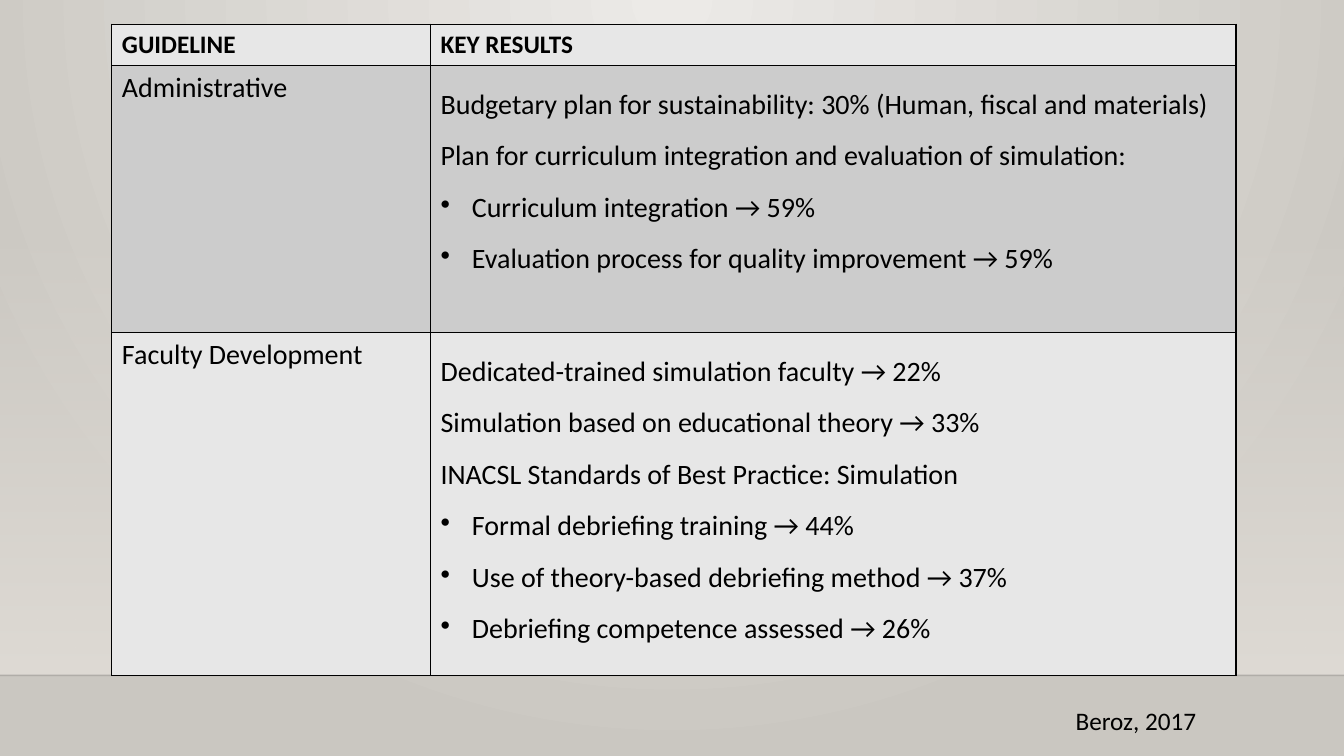
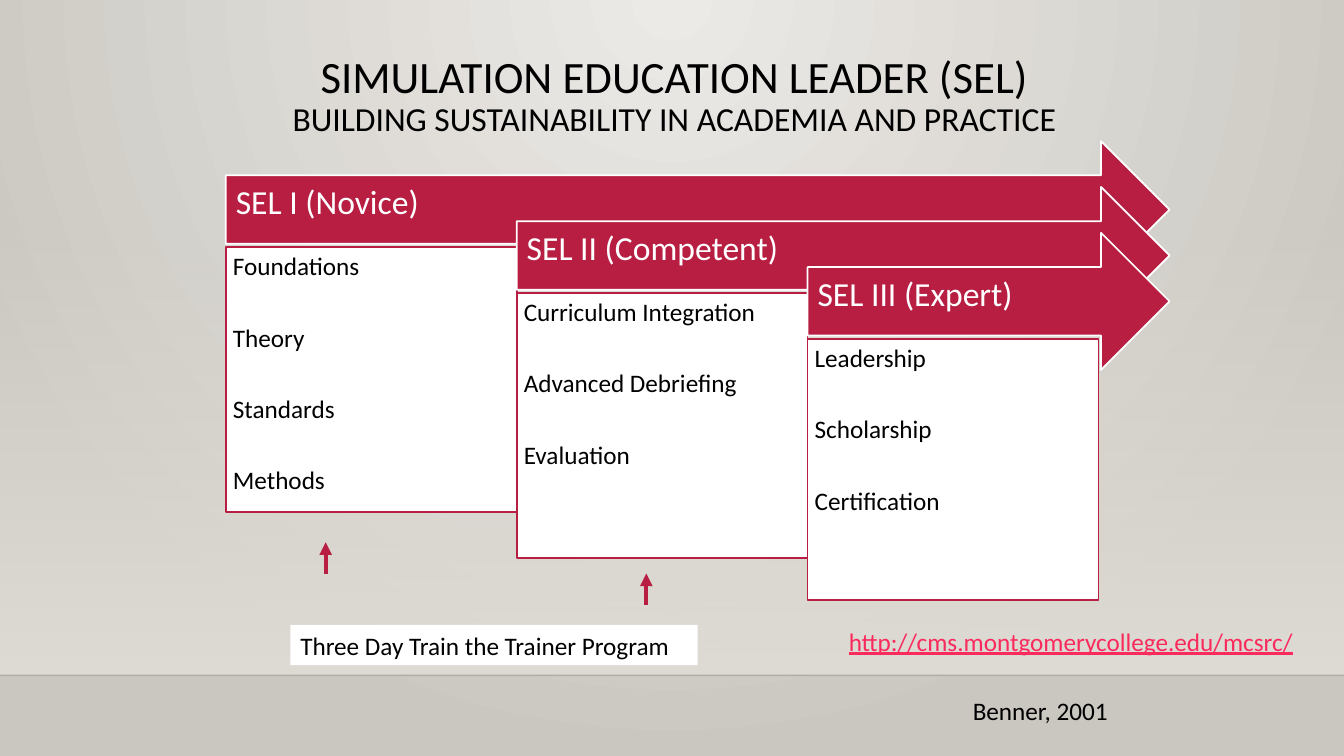
"""Build two slides on simulation guidelines and the leader programme."""
import dataclasses

import lxml.etree
import pptx
import pptx.dml.color
import pptx.enum.shapes
import pptx.enum.text
import pptx.oxml.ns
import pptx.util

Inches = pptx.util.Inches
Pt = pptx.util.Pt
qn = pptx.oxml.ns.qn
SHAPES = pptx.enum.shapes.MSO_SHAPE
ANCHOR = pptx.enum.text.MSO_ANCHOR
ALIGN = pptx.enum.text.PP_ALIGN


@dataclasses.dataclass(frozen=True)
class Theme:
    """Colours, font and type sizes shared by the slides."""
    font: str = "Calibri"
    ink: str = "000000"
    white: str = "FFFFFF"
    accent: str = "B71E42"
    link: str = "FA2B5C"
    glow: str = "ECEAE7"
    ground: str = "CAC7C1"
    haze: str = "DFDBD5"
    light_row: str = "E7E7E7"
    dark_row: str = "CCCCCC"
    title_size: int = 32
    heading_size: int = 24
    table_size: int = 20
    body_size: int = 18


THEME = Theme()
WIDTH, HEIGHT = 13.33, 7.5
HORIZON = 6.7

GUIDELINES = [
    ("Administrative", 2.65, THEME.dark_row, [
        "Budgetary plan for sustainability: 30% (Human, fiscal and materials)",
        "Plan for curriculum integration and evaluation of simulation:",
    ], [
        "Curriculum integration → 59%",
        "Evaluation process for quality improvement → 59%",
    ]),
    ("Faculty Development", 3.4, THEME.light_row, [
        "Dedicated-trained simulation faculty → 22%",
        "Simulation based on educational theory → 33%",
        "INACSL Standards of Best Practice: Simulation",
    ], [
        "Formal debriefing training → 44%",
        "Use of theory-based debriefing method → 37%",
        "Debriefing competence assessed → 26%",
    ]),
]

STAGES = [
    ("SEL I (Novice)", 2.63, ["Foundations", "Theory", "Standards", "Methods"]),
    ("SEL II (Competent)", 2.63, ["Curriculum Integration", "Advanced Debriefing", "Evaluation"]),
    ("SEL III (Expert)", 2.59, ["Leadership", "Scholarship", "Certification"]),
]


def rgb(value):
    """Return a colour from its hex value."""
    return pptx.dml.color.RGBColor.from_string(value)


def add_element(parent, tag, **attributes):
    """Append a drawing element with the given attributes."""
    return lxml.etree.SubElement(parent, qn(tag), attributes)


def set_font(font, size, color=THEME.ink, bold=False):
    """Apply the theme font with a size and colour."""
    font.name, font.size, font.bold = THEME.font, Pt(size), bold
    font.color.rgb = rgb(color)


def write_lines(frame, lines, size, color=THEME.ink, bold=False, spacing=None, gap=0):
    """Write one paragraph per line and return the paragraphs."""
    frame.word_wrap = True
    for index, line in enumerate(lines):
        para = frame.add_paragraph() if index else frame.paragraphs[0]
        para.text = line
        para.alignment = ALIGN.LEFT
        if spacing:
            para.line_spacing = spacing
        if index and gap:
            para.space_before = Pt(gap)
        set_font(para.font, size, color, bold)
    return frame.paragraphs


def set_insets(frame, left, top, right, bottom):
    """Set the four text margins in inches."""
    frame.margin_left, frame.margin_top = Inches(left), Inches(top)
    frame.margin_right, frame.margin_bottom = Inches(right), Inches(bottom)


def add_label(page, left, top, width, text, color=THEME.ink):
    """Add a single line of body text."""
    box = page.shapes.add_textbox(Inches(left), Inches(top), Inches(width), Inches(0.4))
    return write_lines(box.text_frame, [text], THEME.body_size, color)[0]


def add_block(page, preset, left, top, width, height, fill, outline=None):
    """Add a plain preset shape with an optional outline."""
    block = page.shapes.add_shape(preset, Inches(left), Inches(top), Inches(width), Inches(height))
    block.shadow.inherit = False
    block.fill.solid()
    block.fill.fore_color.rgb = rgb(fill)
    if outline:
        block.line.color.rgb = rgb(outline)
        block.line.width = Pt(1.25)
    else:
        block.line.fill.background()
    block.text_frame.vertical_anchor = ANCHOR.TOP
    return block


def add_line(page, start, end, color, width):
    """Add a straight line and return its outline element."""
    line = page.shapes.add_connector(
        pptx.enum.shapes.MSO_CONNECTOR.STRAIGHT, *(Inches(value) for value in start + end))
    line.line.color.rgb = rgb(color)
    line.line.width = Pt(width)
    add_element(line._element.spPr, "a:effectLst")
    return line.line._get_or_add_ln()


def set_gradient(fill, colors):
    """Apply a two-stop gradient and return its element stops."""
    fill.gradient()
    for stop, color in zip(fill.gradient_stops, colors):
        stop.color.rgb = rgb(color)


def set_background(master):
    """Give the master a radial glow from the top centre."""
    set_gradient(master.background.fill, (THEME.glow, THEME.ground))
    gradient = next(master._element.iter(qn("a:gradFill")))
    gradient.remove(gradient.find(qn("a:lin")))
    glow = add_element(gradient, "a:path", **{"path": "circle"})
    add_element(glow, "a:fillToRect", l="43000", t="0", r="43000", b="100000")


def add_page(deck):
    """Add a blank page with the haze and the horizon line."""
    page = deck.slides.add_slide(deck.slide_layouts[6])
    haze = add_block(page, SHAPES.RECTANGLE, 0, 2.21, WIDTH, HORIZON - 2.21, THEME.haze)
    set_gradient(haze.fill, (THEME.haze, THEME.haze))
    haze.fill.gradient_angle = 270
    first_color = next(haze._element.spPr.iter(qn("a:srgbClr")))
    add_element(first_color, "a:alpha", val="0")
    outline = add_line(page, (0, HORIZON), (WIDTH, HORIZON), THEME.ink, 1)
    add_element(next(outline.iter(qn("a:srgbClr"))), "a:alpha", val="20000")
    return page


def style_cell(cell, fill):
    """Give a cell thin black borders and a solid fill."""
    properties = cell._tc.get_or_add_tcPr()
    for side in ("a:lnL", "a:lnR", "a:lnT", "a:lnB"):
        border = add_element(properties, side, w=str(Pt(1)))
        add_element(add_element(border, "a:solidFill"), "a:srgbClr", val=THEME.ink)
    cell.fill.solid()
    cell.fill.fore_color.rgb = rgb(fill)


def add_bullet(para):
    """Turn a paragraph into a hanging bullet."""
    properties = para._p.get_or_add_pPr()
    indent = Inches(0.31)
    properties.set("marL", str(indent))
    properties.set("indent", str(-indent))
    add_element(properties, "a:buChar", char="•")


def add_results(frame, statements, bullets):
    """Write the key results, bulleting the detail lines."""
    paras = write_lines(frame, statements + bullets, THEME.table_size, spacing=1.5)
    for para in paras[len(statements):]:
        add_bullet(para)
        set_font(para.font, THEME.table_size)


def add_guideline_table(page):
    """Add the table of guidelines and key results."""
    heights = [0.41] + [entry[1] for entry in GUIDELINES]
    widths = (3.16, 7.99)
    table = page.shapes.add_table(
        len(heights), len(widths), Inches(1.11), Inches(0.24),
        Inches(sum(widths)), Inches(sum(heights))).table
    table.horz_banding = False
    for column, width in zip(table.columns, widths):
        column.width = Inches(width)
    for row, height in zip(table.rows, heights):
        row.height = Inches(height)
    for cell, heading in zip(table.rows[0].cells, ("GUIDELINE", "KEY RESULTS")):
        style_cell(cell, THEME.light_row)
        write_lines(cell.text_frame, [heading], THEME.body_size, bold=True)
    for row, (name, _, fill, statements, bullets) in enumerate(GUIDELINES, 1):
        for cell in table.rows[row].cells:
            style_cell(cell, fill)
        write_lines(table.cell(row, 0).text_frame, [name], THEME.table_size)
        add_results(table.cell(row, 1).text_frame, statements, bullets)


def add_title(page, heading, subheading):
    """Add the centred two-line title."""
    box = page.shapes.add_textbox(Inches(0.47), Inches(0.49), Inches(12.44), Inches(1.15))
    box.text_frame.word_wrap = True
    para = box.text_frame.paragraphs[0]
    para.alignment, para.line_spacing = ALIGN.CENTER, 0.9
    span = para.add_run()
    span.text = heading
    set_font(span.font, THEME.title_size)
    para.add_line_break()
    span = para.add_run()
    span.text = subheading
    set_font(span.font, THEME.heading_size)


def add_stage(page, index, name, height, topics):
    """Add one stage arrow with its topic box below."""
    step, right = 2.885, 11.6
    left, top = 2.24 + step * index, 1.4 + 0.455 * index
    arrow = add_block(page, SHAPES.RIGHT_ARROW, left, top, right - left, 1.36,
                      THEME.accent, THEME.white)
    arrow.text_frame.vertical_anchor = ANCHOR.MIDDLE
    set_insets(arrow.text_frame, 0.1, 0.1, 0.28, 0.22)
    write_lines(arrow.text_frame, [name], THEME.heading_size, THEME.white, spacing=0.9)
    box = add_block(page, SHAPES.RECTANGLE, left, top + 1.05, step, height,
                    THEME.white, THEME.accent)
    set_insets(box.text_frame, 0.07, 0.07, 0.07, 0.07)
    write_lines(box.text_frame, topics, THEME.body_size, spacing=0.9, gap=31.5)


def add_up_arrow(page, x, bottom):
    """Add a short arrow pointing up."""
    outline = add_line(page, (x, bottom), (x, bottom - 0.31), THEME.accent, 3)
    add_element(outline, "a:tailEnd", type="triangle")


def build_guidelines(deck):
    """Build the guideline results slide."""
    page = add_page(deck)
    add_guideline_table(page)
    add_label(page, 10.57, 6.95, 1.9, "Beroz, 2017")


def build_leader(deck):
    """Build the simulation education leader slide."""
    page = add_page(deck)
    for index, stage in enumerate(STAGES):
        add_stage(page, index, *stage)
    add_title(page, "SIMULATION EDUCATION LEADER (SEL)",
              "BUILDING SUSTAINABILITY IN ACADEMIA AND PRACTICE")
    add_label(page, 9.55, 6.85, 3.53, "Benner, 2001")
    program = add_block(page, SHAPES.RECTANGLE, 2.88, 6.2, 4.04, 0.4, THEME.white)
    write_lines(program.text_frame, ["Three Day Train the Trainer Program"], THEME.body_size)
    for x, bottom in ((3.23, 5.69), (6.41, 6)):
        add_up_arrow(page, x, bottom)
    address = add_label(page, 8.32, 6.16, 4.8, "http://cms.montgomerycollege.edu/mcsrc/", THEME.link)
    address.font.underline = True


def main():
    """Build and save the deck."""
    deck = pptx.Presentation()
    deck.slide_width, deck.slide_height = Inches(WIDTH), Inches(HEIGHT)
    set_background(deck.slide_master)
    build_guidelines(deck)
    build_leader(deck)
    deck.save("out.pptx")


if __name__ == "__main__":
    main()
